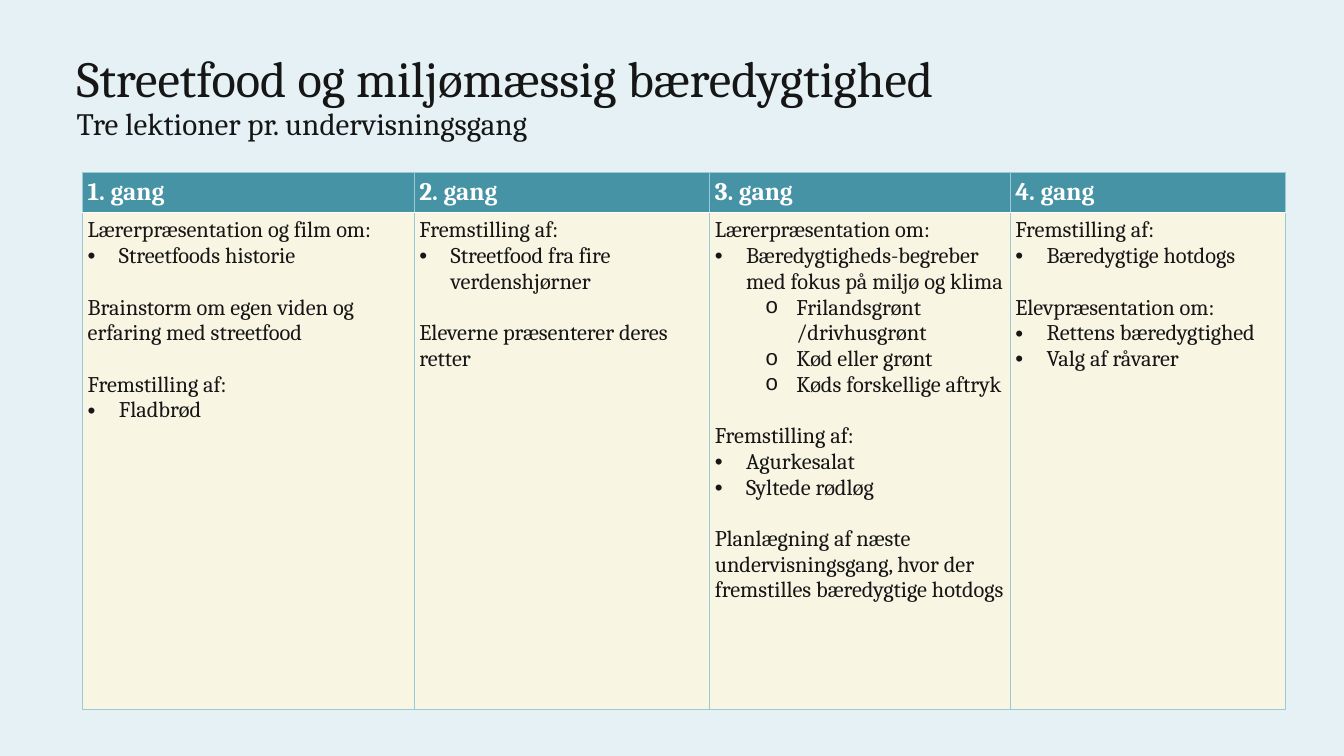
from lxml.etree import SubElement
from pptx import Presentation
from pptx.dml.color import RGBColor
from pptx.enum.text import MSO_ANCHOR, MSO_AUTO_SIZE, PP_ALIGN
from pptx.oxml.ns import qn
from pptx.util import Inches, Pt

BACKGROUND = RGBColor(0xE5, 0xF1, 0xF4)
INK = RGBColor(0x16, 0x16, 0x16)
WHITE = RGBColor(0xFF, 0xFF, 0xFF)
TEAL = RGBColor(0x46, 0x93, 0xA6)
CREAM = RGBColor(0xF9, 0xF5, 0xE3)
GRID = RGBColor(0x99, 0xCA, 0xD6)

# Bullet character, its font and the left indent for each list level
BULLETS = {1: ("•", "Arial", 0.31), 2: ("o", "Courier New", 0.81)}
HANGING = 0.31
SECTION_GAP = 18.4

# Each session holds sections; each section holds (level, text) lines
SESSIONS = {
    "1. gang": [
        [(0, "Lærerpræsentation og film om:"), (1, "Streetfoods historie")],
        [(0, "Brainstorm om egen viden og erfaring med streetfood")],
        [(0, "Fremstilling af:"), (1, "Fladbrød")],
    ],
    "2. gang": [
        [(0, "Fremstilling af:"), (1, "Streetfood fra fire verdenshjørner")],
        [(0, "Eleverne præsenterer deres retter")],
    ],
    "3. gang": [
        [(0, "Lærerpræsentation om:"),
         (1, "Bæredygtigheds-begreber med fokus på miljø og klima"),
         (2, "Frilandsgrønt /drivhusgrønt"),
         (2, "Kød eller grønt"),
         (2, "Køds forskellige aftryk")],
        [(0, "Fremstilling af:"), (1, "Agurkesalat"), (1, "Syltede rødløg")],
        [(0, "Planlægning af næste undervisningsgang, hvor der "
             "fremstilles bæredygtige hotdogs")],
    ],
    "4. gang": [
        [(0, "Fremstilling af:"), (1, "Bæredygtige hotdogs")],
        [(0, "Elevpræsentation om:"), (1, "Rettens bæredygtighed"),
         (1, "Valg af råvarer")],
    ],
}


class PlanSlide:
    font_name = "Cambria"

    def __init__(self, presentation):
        self.slide = presentation.slides.add_slide(presentation.slide_layouts[5])
        self.slide.background.fill.solid()
        self.slide.background.fill.fore_color.rgb = BACKGROUND

    def style(self, paragraph, size, color=INK, bold=False):
        font = paragraph.font
        font.name, font.size, font.bold = self.font_name, Pt(size), bold
        font.color.rgb = color

    def title(self, lines, left, top, width, height):
        heading = self.slide.shapes.title
        heading.left, heading.top = Inches(left), Inches(top)
        heading.width, heading.height = Inches(width), Inches(height)
        frame = heading.text_frame
        frame.text = "\n".join(text for text, _ in lines)
        frame.word_wrap = True
        frame.auto_size = MSO_AUTO_SIZE.NONE
        frame.vertical_anchor = MSO_ANCHOR.MIDDLE
        for paragraph, (_, size) in zip(frame.paragraphs, lines):
            paragraph.alignment = PP_ALIGN.LEFT
            paragraph.line_spacing = 0.9
            paragraph.space_before = Pt(0)
            self.style(paragraph, size)

    def bullet(self, paragraph, level):
        character, font_name, indent = BULLETS[level]
        paragraph.level = level - 1
        properties = paragraph._p.get_or_add_pPr()
        properties.set("marL", str(Inches(indent)))
        properties.set("indent", str(-Inches(HANGING)))
        SubElement(properties, qn("a:buFont"), typeface=font_name)
        SubElement(properties, qn("a:buChar"), char=character)

    def format_cell(self, cell, fill, top=(GRID, 0.5), bottom=(GRID, 0.5)):
        cell.margin_left = cell.margin_right = Inches(0.05)
        cell.margin_top = cell.margin_bottom = Inches(0.05)
        side = (GRID, 0.5)
        borders = {"a:lnL": side, "a:lnR": side, "a:lnT": top, "a:lnB": bottom}
        for tag, (color, width) in borders.items():
            line = SubElement(cell._tc.get_or_add_tcPr(), qn(tag), w=str(Pt(width)))
            SubElement(SubElement(line, qn("a:solidFill")),
                       qn("a:srgbClr"), val=str(color))
        cell.fill.solid()
        cell.fill.fore_color.rgb = fill

    def write_sections(self, cell, sections):
        frame = cell.text_frame
        paragraph = frame.paragraphs[0]
        for number, section in enumerate(sections):
            for position, (level, text) in enumerate(section):
                if number or position:
                    paragraph = frame.add_paragraph()
                paragraph.text = text
                if number and not position:
                    paragraph.space_before = Pt(SECTION_GAP)
                if level:
                    self.bullet(paragraph, level)
                self.style(paragraph, 16)

    def session_table(self, sessions, left, top, widths, heights):
        table = self.slide.shapes.add_table(
            len(heights), len(widths), Inches(left), Inches(top),
            Inches(sum(widths)), Inches(sum(heights))).table
        table.horz_banding = False
        for row, height in zip(table.rows, heights):
            row.height = Inches(height)
        divider = (WHITE, 1)
        for index, (name, sections) in enumerate(sessions.items()):
            table.columns[index].width = Inches(widths[index])
            header, body = table.cell(0, index), table.cell(1, index)
            self.format_cell(header, TEAL, bottom=divider)
            self.format_cell(body, CREAM, top=divider)
            header.text = name
            self.style(header.text_frame.paragraphs[0], 18, WHITE, bold=True)
            self.write_sections(body, sections)


def main():
    presentation = Presentation()
    presentation.slide_width = Inches(13.33)
    presentation.slide_height = Inches(7.5)
    plan = PlanSlide(presentation)

    # Heading with subtitle
    plan.title([("Streetfood og miljømæssig bæredygtighed", 36.1),
                ("Tre lektioner pr. undervisningsgang", 22.2)],
               0.66, 0.26, 9.59, 1.43)

    # Lesson plan, one column per session
    plan.session_table(SESSIONS, 0.82, 1.71,
                       widths=[3.29, 2.93, 2.98, 2.73], heights=[0.4, 4.93])

    presentation.save("out.pptx")


if __name__ == "__main__":
    main()
